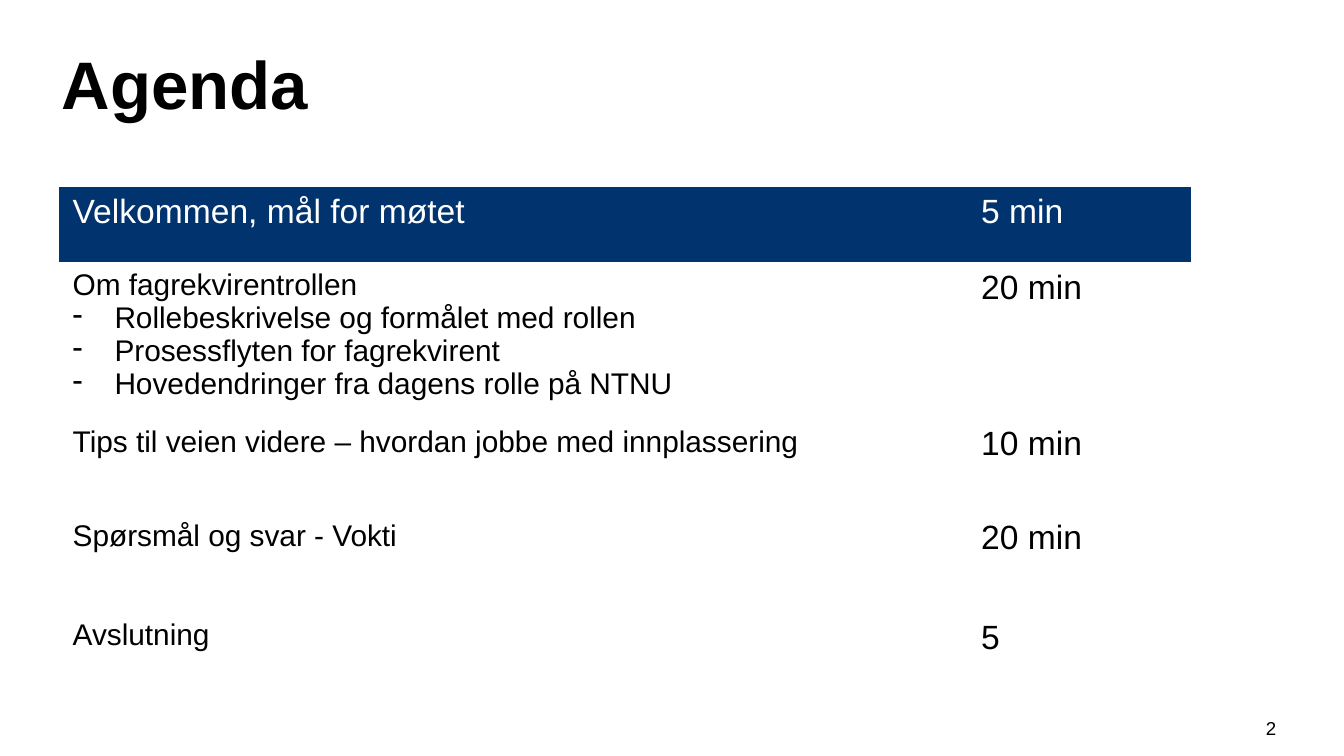
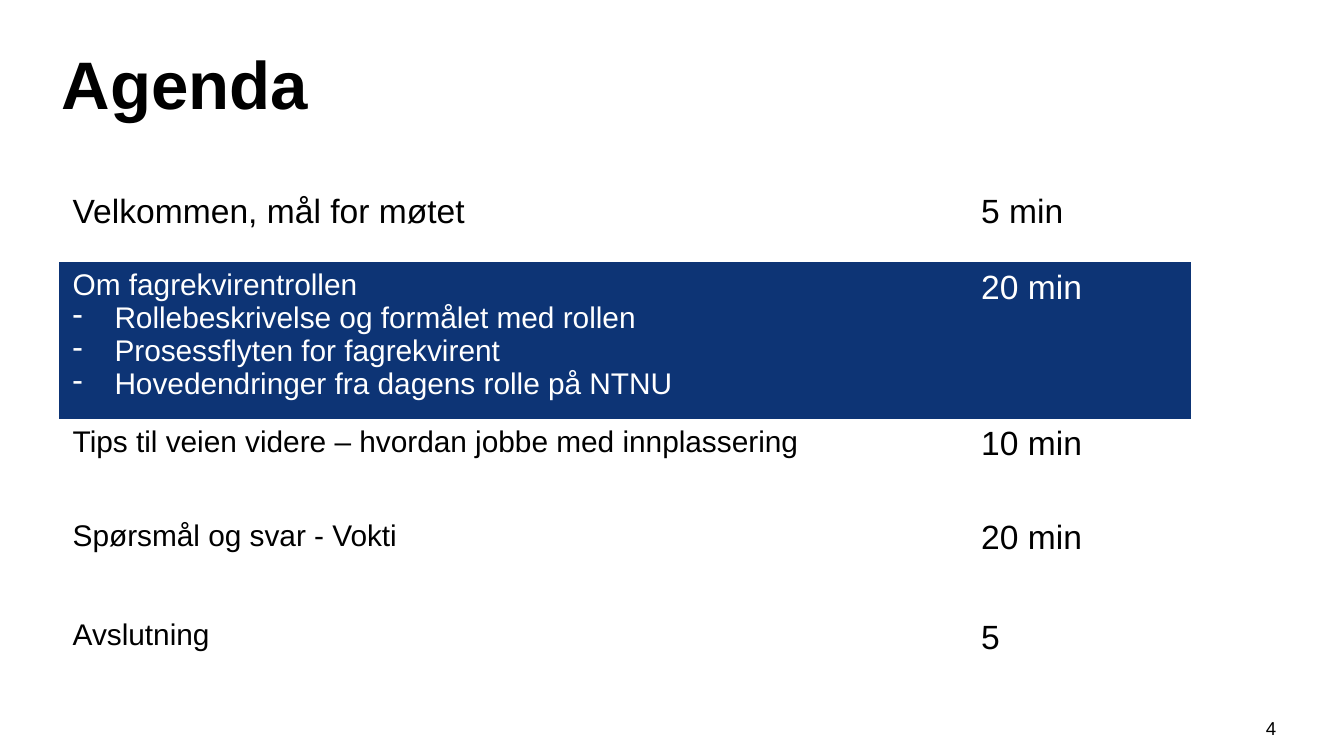
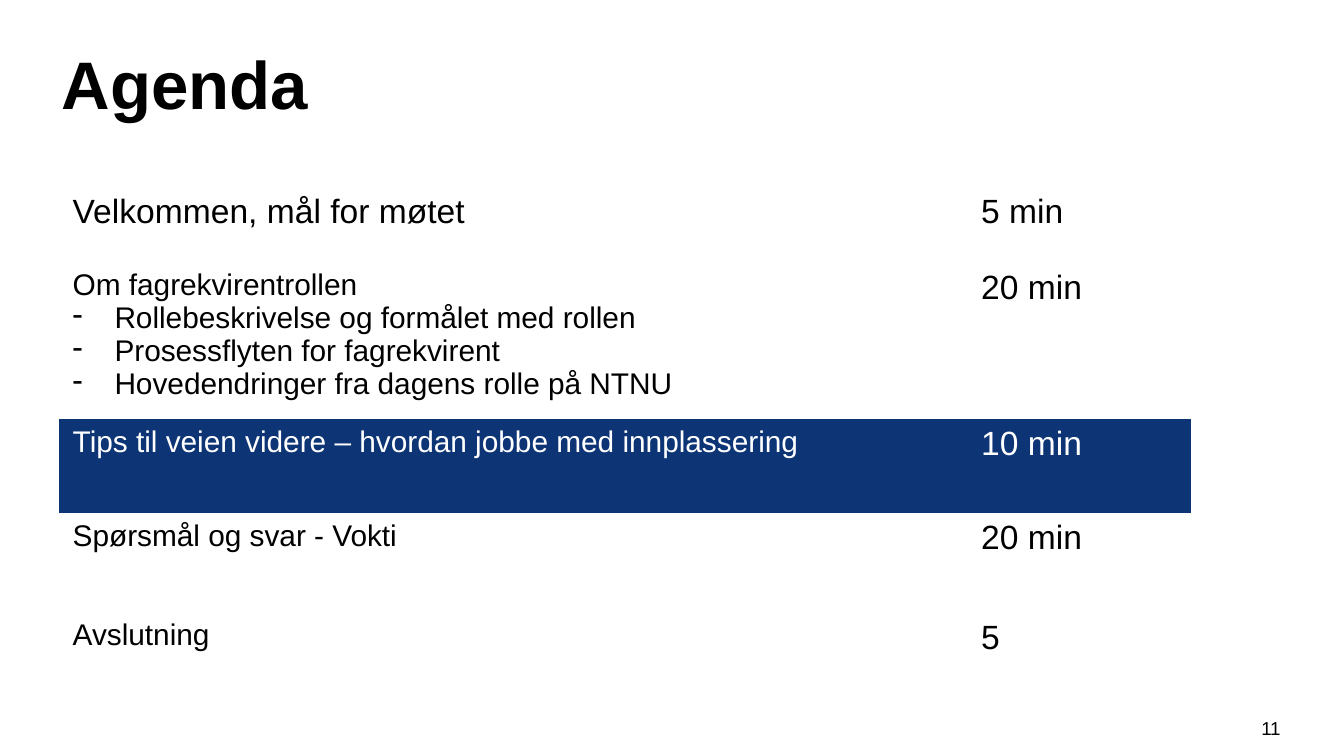
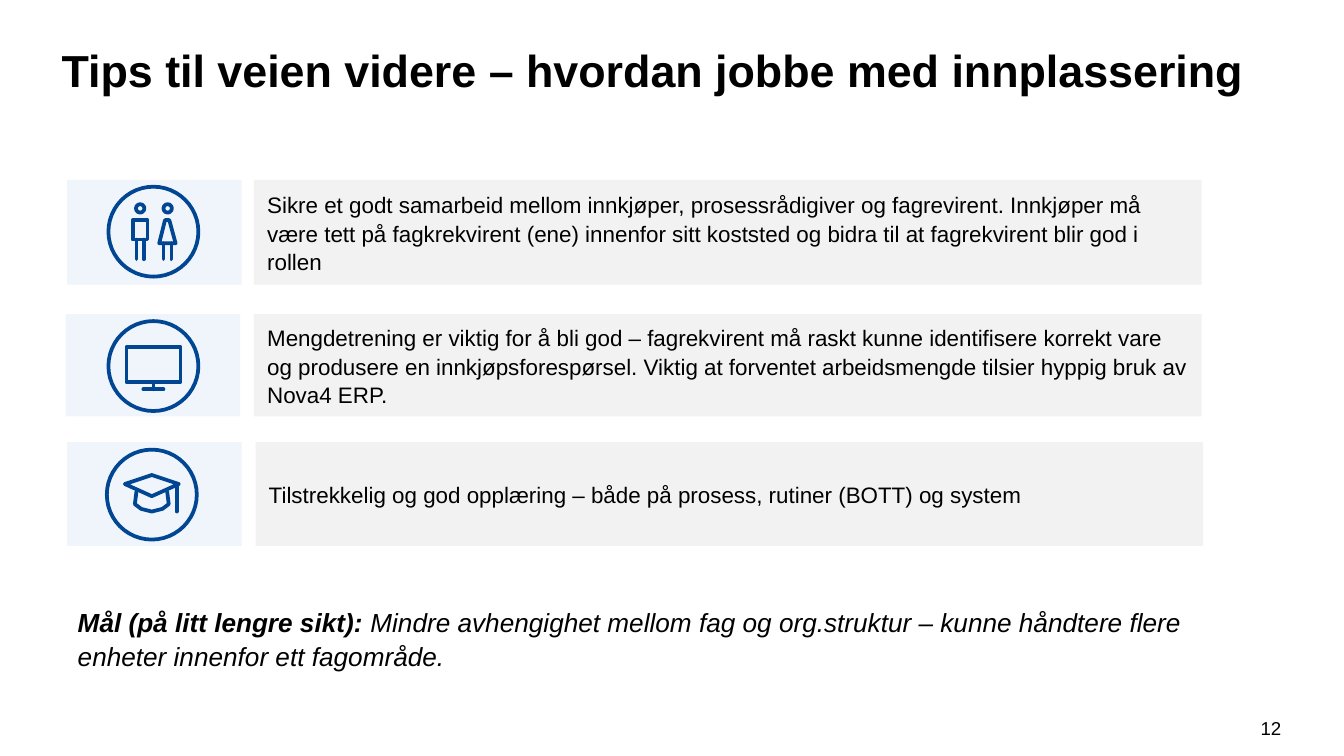
"""Build the agenda slides and the advice slide on placing the requester role."""
from lxml import etree
from pptx import Presentation
from pptx.dml.color import RGBColor
from pptx.enum.shapes import MSO_SHAPE
from pptx.enum.text import MSO_ANCHOR, MSO_AUTO_SIZE, PP_ALIGN
from pptx.oxml.ns import qn
from pptx.util import Cm, Pt

RECT, OVAL = MSO_SHAPE.RECTANGLE, MSO_SHAPE.OVAL
TOP, MIDDLE = MSO_ANCHOR.TOP, MSO_ANCHOR.MIDDLE
LEFT, CENTER = PP_ALIGN.LEFT, PP_ALIGN.CENTER
NO_AUTOFIT = MSO_AUTO_SIZE.NONE

BLACK = RGBColor(0x00, 0x00, 0x00)
WHITE = RGBColor(0xFF, 0xFF, 0xFF)
NAVY = RGBColor(0x01, 0x34, 0x6E)
ROYAL = RGBColor(0x0D, 0x34, 0x75)
ICON_BLUE = RGBColor(0x01, 0x46, 0x93)
PALE_BLUE = RGBColor(0xF0, 0xF4, 0xFB)
PALE_GREY = RGBColor(0xF2, 0xF2, 0xF2)

FONT = "Arial"
PLAIN_TABLE = "{2D5ABB26-0587-4C30-8999-92F81FD0307C}"
BODY_SPACING = 1.07
ICON_UNIT = Cm(0.01)

TIPS = "Tips til veien videre – hvordan jobbe med innplassering"

AGENDA_COLUMNS = (17.17, 4.22)
AGENDA = [
    (1.42, 18, ["Velkommen, mål for møtet"], "5 min"),
    (2.78, 16, ["Om fagrekvirentrollen",
                "Rollebeskrivelse og formålet med rollen",
                "Prosessflyten for fagrekvirent",
                "Hovedendringer fra dagens rolle på NTNU"], "20 min"),
    (1.78, 16, [TIPS], "10 min"),
    (1.88, 16, ["Spørsmål og svar - Vokti"], "20 min"),
    (1.78, 16, ["Avslutning"], "5"),
]

PEOPLE = {
    "dots": [(-25, -44), (27, -44)],
    "closed": [
        [(-39, -22), (-11, -22), (-11, 15), (-39, 15)],
        [(22, -22), (30, -22), (42, 22), (11, 22)],
    ],
    "open": [
        [(-32, 15), (-32, 52)], [(-18, 15), (-18, 52)],
        [(19, 22), (19, 52)], [(34, 22), (34, 52)],
    ],
}
SCREEN = {
    "closed": [[(-51, -36), (51, -36), (51, 30), (-51, 30)]],
    "open": [[(0, 30), (0, 44)], [(-19, 44), (19, 44)]],
}
GRADUATION_CAP = {
    "closed": [[(0, -37), (51, -20), (0, 3), (-51, -20)]],
    "open": [
        [(47, -18), (47, 32)],
        [(-29, -6), (-32, 18), (-20, 27), (0, 32), (20, 27), (32, 18), (29, -6)],
    ],
}

CARDS = [
    (1.27, 4.8, 3.4, 1.98, (2.9, 4.38), PEOPLE,
     "Sikre et godt samarbeid mellom innkjøper, prosessrådigiver og fagrevirent. "
     "Innkjøper må være tett på fagkrekvirent (ene) innenfor sitt koststed og bidra "
     "til at fagrekvirent blir god i rollen"),
    (1.24, 4.8, 5.94, 1.93, (2.9, 6.92), SCREEN,
     "Mengdetrening er viktig for å bli god – fagrekvirent må raskt kunne identifisere "
     "korrekt vare og produsere en innkjøpsforespørsel. Viktig at forventet "
     "arbeidsmengde tilsier hyppig bruk av Nova4 ERP."),
    (1.27, 4.83, 8.36, 1.96, (2.87, 9.35), GRADUATION_CAP,
     "Tilstrekkelig og god opplæring – både på prosess, rutiner (BOTT) og system"),
]


def write(p, text, size=12, color=BLACK, bold=False, italic=False, align=LEFT, spacing=None):
    """Add a formatted run to a paragraph."""
    p.alignment = align
    if spacing:
        p.line_spacing = spacing
    r = p.add_run()
    r.text = text
    r.font.name = FONT
    r.font.size = Pt(size)
    r.font.color.rgb = color
    r.font.bold = bold
    r.font.italic = italic


def add_dash(p):
    """Give a paragraph a hanging dash."""
    pPr = p._p.get_or_add_pPr()
    pPr.set("marL", str(Cm(0.79)))
    pPr.set("indent", str(-Cm(0.79)))
    etree.SubElement(pPr, qn("a:buChar")).set("char", "-")


class Deck:
    """Holds the presentation, its style and the current slide."""

    def __init__(self):
        """Start an empty widescreen presentation."""
        self.prs = Presentation()
        self.prs.slide_width, self.prs.slide_height = Cm(25.4), Cm(14.29)
        self.s = None

    def slide(self, title, number, size=36, height=1.8):
        """Add a slide with its title and page number."""
        self.s = self.prs.slides.add_slide(self.prs.slide_layouts[5])
        sp = self.s.shapes.title
        sp.left, sp.top, sp.width, sp.height = Cm(0.91), Cm(0.58), Cm(23.29), Cm(height)
        tf = sp.text_frame
        tf.auto_size = NO_AUTOFIT
        tf.vertical_anchor = TOP
        tf.margin_top = Cm(0.22)
        write(tf.paragraphs[0], title, size=size, bold=True)
        p = self.text_box(23.55, 13.39, 0.94, 0.76, anchor=MIDDLE, wrap=False)
        write(p, str(number), size=10, align=CENTER)

    def text_box(self, left, top, width, height, anchor=TOP, wrap=True):
        """Add a text box and return its first paragraph."""
        sp = self.s.shapes.add_textbox(Cm(left), Cm(top), Cm(width), Cm(height))
        tf = sp.text_frame
        tf.word_wrap = wrap
        tf.vertical_anchor = anchor
        return tf.paragraphs[0]

    def panel(self, left, top, width, height, color, text=None):
        """Add a flat rectangle, with text if given."""
        sp = self.s.shapes.add_shape(RECT, Cm(left), Cm(top), Cm(width), Cm(height))
        sp.shadow.inherit = False
        sp.fill.solid()
        sp.fill.fore_color.rgb = color
        sp.line.fill.background()
        if text:
            tf = sp.text_frame
            tf.word_wrap = True
            tf.vertical_anchor = MIDDLE
            write(tf.paragraphs[0], text, spacing=BODY_SPACING)

    def outline(self, sp):
        """Turn a shape into a rounded icon stroke."""
        sp.shadow.inherit = False
        sp.fill.background()
        sp.line.color.rgb = ICON_BLUE
        sp.line.width = Pt(2)
        ln = sp.line._get_or_add_ln()
        ln.set("cap", "rnd")
        etree.SubElement(ln, qn("a:round"))

    def ring(self, x, y, diameter):
        """Draw a circle around a centre."""
        corner = Cm(x - diameter / 2), Cm(y - diameter / 2)
        self.outline(self.s.shapes.add_shape(OVAL, *corner, Cm(diameter), Cm(diameter)))

    def stroke(self, x, y, points, close):
        """Draw a line through points given around a centre."""
        builder = self.s.shapes.build_freeform(*points[0], scale=ICON_UNIT)
        builder.add_line_segments(points[1:], close=close)
        self.outline(builder.convert_to_shape(Cm(x), Cm(y)))

    def icon(self, x, y, parts):
        """Draw a ringed line icon around a centre."""
        self.ring(x, y, 1.7)
        for dx, dy in parts.get("dots", []):
            self.ring(x + dx / 100, y + dy / 100, 0.16)
        for kind in ("closed", "open"):
            for points in parts[kind]:
                self.stroke(x, y, points, kind == "closed")

    def agenda(self, active, highlight):
        """Add the agenda table with one row highlighted."""
        frame = self.s.shapes.add_table(
            len(AGENDA), len(AGENDA_COLUMNS), Cm(1.12), Cm(3.53),
            Cm(sum(AGENDA_COLUMNS)), Cm(sum(row[0] for row in AGENDA)))
        table = frame.table
        table.first_row = table.horz_banding = False
        table._tbl.tblPr.find(qn("a:tableStyleId")).text = PLAIN_TABLE
        for column, width in zip(table.columns, AGENDA_COLUMNS):
            column.width = Cm(width)
        for i, (height, size, topics, duration) in enumerate(AGENDA):
            table.rows[i].height = Cm(height)
            fill, color = (highlight, WHITE) if i == active else (WHITE, BLACK)
            for j, (lines, points) in enumerate(((topics, size), ([duration], 18))):
                cell = table.cell(i, j)
                cell.fill.solid()
                cell.fill.fore_color.rgb = fill
                tf = cell.text_frame
                for n, line in enumerate(lines):
                    p = tf.add_paragraph() if n else tf.paragraphs[0]
                    if n:
                        add_dash(p)
                    write(p, line, size=points, color=color)


def main():
    """Build and save the slides."""
    deck = Deck()
    for active, (number, highlight) in enumerate(((2, NAVY), (4, ROYAL), (11, ROYAL))):
        deck.slide("Agenda", number)
        deck.agenda(active, highlight)

    deck.slide(TIPS, 12, size=24, height=2.31)
    for icon_left, text_left, top, height, centre, parts, text in CARDS:
        deck.panel(icon_left, top, 3.3, height, PALE_BLUE)
        deck.panel(text_left, top, 17.91, height, PALE_GREY, text)
        deck.icon(*centre, parts)
    goal = deck.text_box(1.22, 11.3, 21.49, 2.06)
    write(goal, "Mål (på litt lengre sikt): ", size=14, bold=True, italic=True)
    write(goal, "Mindre avhengighet mellom fag og org.struktur – kunne håndtere flere "
          "enheter innenfor ett fagområde.", size=14, italic=True, spacing=BODY_SPACING)
    deck.prs.save("out.pptx")


if __name__ == "__main__":
    main()
